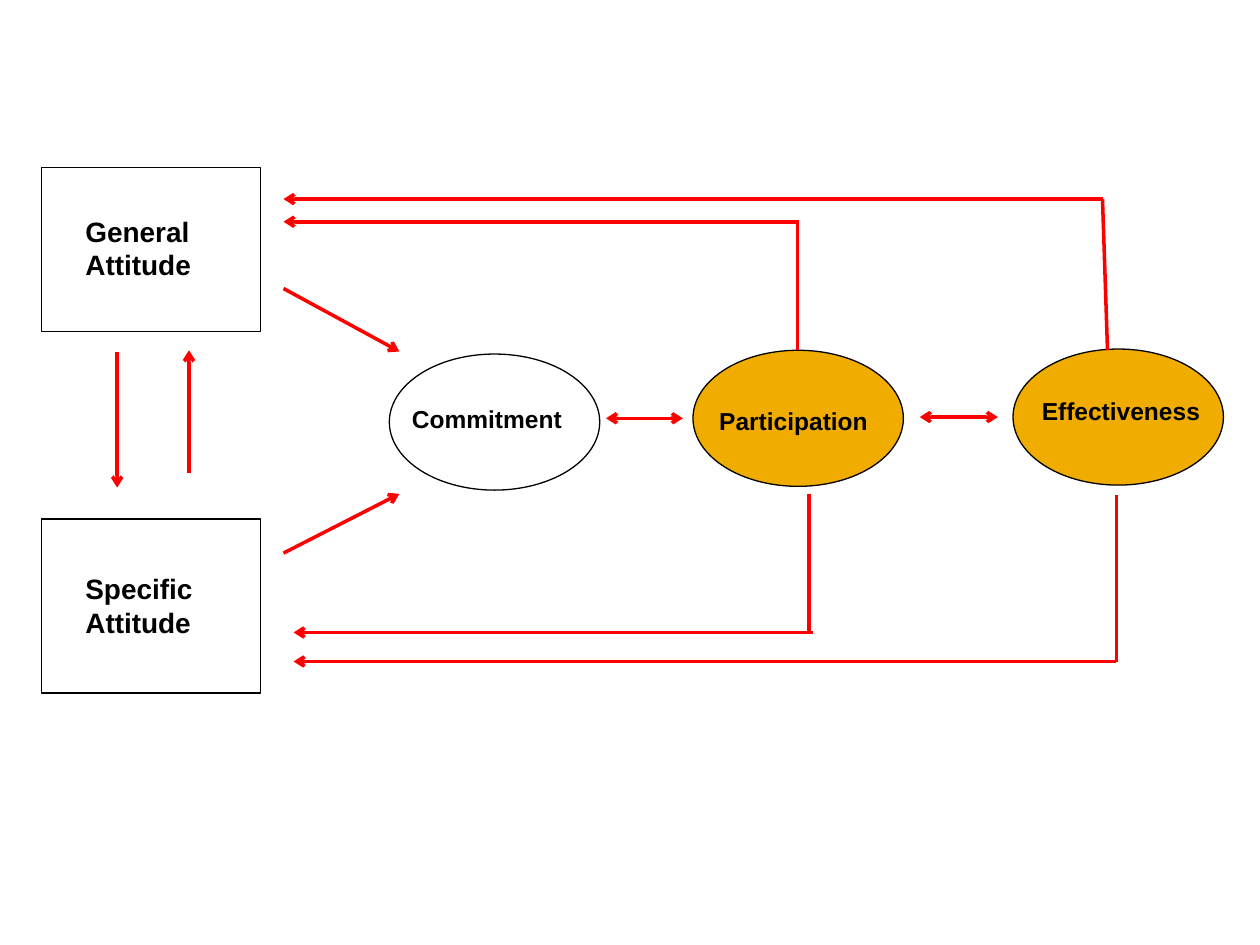
from lxml.etree import SubElement
from pptx import Presentation
from pptx.dml.color import RGBColor
from pptx.enum.shapes import MSO_CONNECTOR, MSO_SHAPE
from pptx.enum.text import MSO_AUTO_SIZE
from pptx.oxml.ns import qn
from pptx.util import Inches, Pt

BLACK = RGBColor(0x00, 0x00, 0x00)
WHITE = RGBColor(0xFF, 0xFF, 0xFF)
GOLD = RGBColor(0xF0, 0xAD, 0x00)
RED = RGBColor(0xFF, 0x00, 0x00)


def add_node(slide, outline, box, fill):
    node = slide.shapes.add_shape(outline, *map(Inches, box))
    node.shadow.inherit = False
    node.fill.solid()
    node.fill.fore_color.rgb = fill
    node.line.color.rgb = BLACK
    node.line.width = Pt(0.75)


def add_label(slide, text, box, size):
    label = slide.shapes.add_textbox(*map(Inches, box))
    frame = label.text_frame
    frame.word_wrap = True
    frame.auto_size = MSO_AUTO_SIZE.SHAPE_TO_FIT_TEXT
    run = frame.paragraphs[0].add_run()
    run.text = text
    run.font.name = "Arial"
    run.font.size = Pt(size)
    run.font.bold = True
    run.font.color.rgb = BLACK


def add_link(slide, start, end, *arrow_ends):
    """Draw a red line; arrow_ends names "headEnd" (start) and "tailEnd" (end)."""
    link = slide.shapes.add_connector(
        MSO_CONNECTOR.STRAIGHT, *map(Inches, (*start, *end)))
    link.line.color.rgb = RED
    link.line.width = Pt(2)
    properties = link.element.spPr
    outline = properties.find(qn("a:ln"))
    for arrow_end in arrow_ends:
        SubElement(outline, qn(f"a:{arrow_end}"), type="arrow")
    SubElement(properties, qn("a:effectLst"))


def add_attitude(slide, text, box, label_top, label_width):
    left = box[0]
    add_node(slide, MSO_SHAPE.FLOWCHART_PROCESS, box, WHITE)
    add_label(slide, text, (left + 0.25, label_top, label_width, 0.64), 16)


def add_stage(slide, text, box, fill, label_box):
    add_node(slide, MSO_SHAPE.OVAL, box, fill)
    add_label(slide, text, label_box, 14)


def add_feedback(slide, stage_point, corner, rail_start, rail_end):
    """Lead from a stage to a horizontal rail that points back to an attitude."""
    add_link(slide, stage_point, corner)
    add_link(slide, rail_start, rail_end, "tailEnd")


def add_attitude_links(slide):
    for start, end in (
        ((0.93, 2.79), (0.93, 3.87)),
        ((1.5, 3.75), (1.5, 2.78)),
        ((2.25, 2.29), (3.17, 2.79)),
        ((2.25, 4.39), (3.17, 3.92)),
    ):
        add_link(slide, start, end, "tailEnd")


def add_stage_links(slide):
    for left, right, y in ((4.81, 5.42, 3.32), (7.3, 7.92, 3.31)):
        add_link(slide, (left, y), (right, y), "headEnd", "tailEnd")


def main():
    deck = Presentation()
    deck.slide_width, deck.slide_height = Inches(10), Inches(7.5)
    slide = deck.slides.add_slide(deck.slide_layouts[6])

    add_attitude(slide, "General Attitude", (0.33, 1.33, 1.74, 1.3), 1.65, 1.08)
    add_attitude(slide, "Specific Attitude", (0.33, 4.12, 1.74, 1.38), 4.49, 1.14)

    for text, left, top, fill, label_box in (
        ("Commitment", 3.09, 2.81, WHITE, (3.17, 3.16, 1.42, 0.34)),
        ("Participation", 5.5, 2.78, GOLD, (5.61, 3.17, 1.56, 0.34)),
        ("Effectiveness", 8.04, 2.77, GOLD, (8.17, 3.09, 1.54, 0.34)),
    ):
        add_stage(slide, text, (left, top, 1.67, 1.08), fill, label_box)

    add_attitude_links(slide)
    add_stage_links(slide)
    for feedback in (
        ((6.33, 2.78), (6.33, 1.76), (6.34, 1.76), (2.25, 1.76)),
        ((8.79, 2.78), (8.75, 1.58), (8.75, 1.58), (2.25, 1.58)),
        ((6.42, 3.92), (6.42, 5.02), (6.45, 5.02), (2.33, 5.02)),
        ((8.86, 3.93), (8.86, 5.25), (8.86, 5.25), (2.33, 5.25)),
    ):
        add_feedback(slide, *feedback)

    deck.save("out.pptx")


if __name__ == "__main__":
    main()
